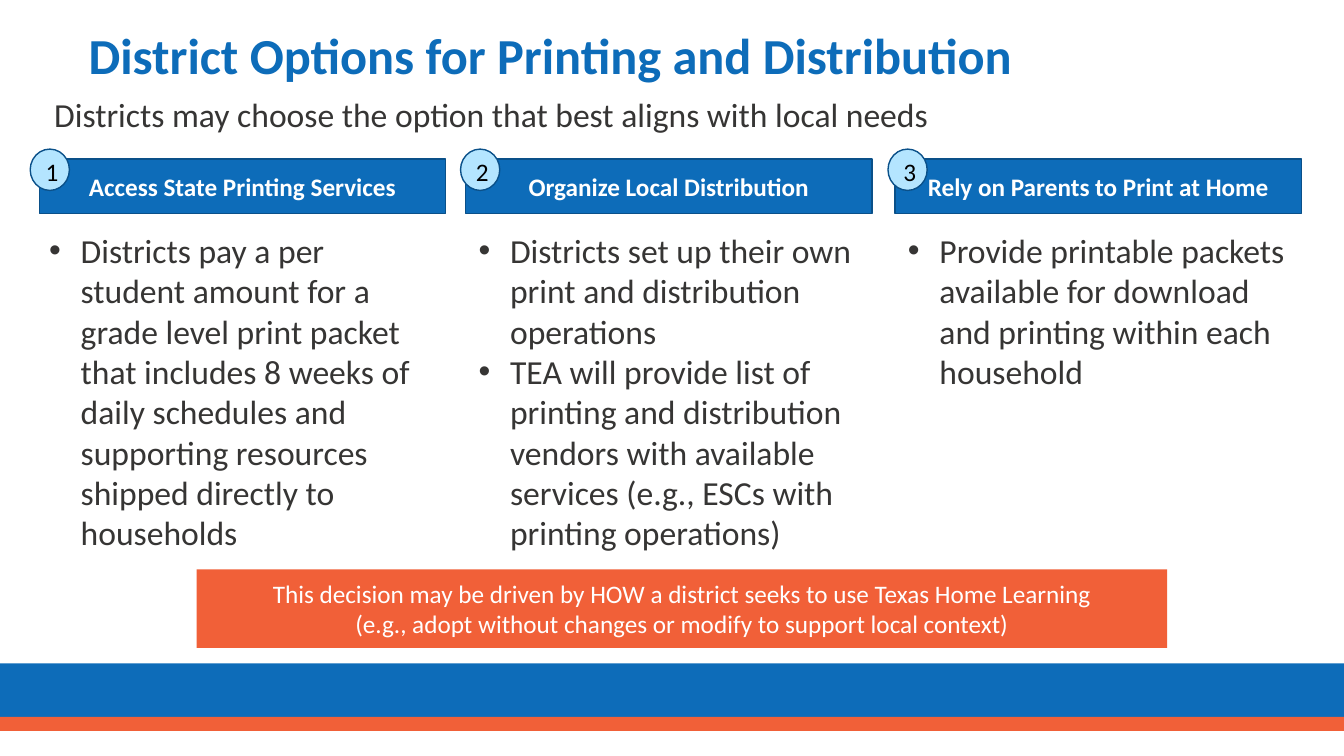
"""Build the slide on district options for printing and distribution."""
from dataclasses import dataclass

from lxml import etree
from pptx import Presentation
from pptx.dml.color import RGBColor
from pptx.enum.shapes import MSO_SHAPE
from pptx.enum.text import MSO_ANCHOR, PP_ALIGN
from pptx.oxml.ns import qn
from pptx.util import Pt

RECTANGLE, ROUNDED, OVAL = MSO_SHAPE.RECTANGLE, MSO_SHAPE.ROUNDED_RECTANGLE, MSO_SHAPE.OVAL
TOP, MIDDLE = MSO_ANCHOR.TOP, MSO_ANCHOR.MIDDLE
LEFT, CENTER = PP_ALIGN.LEFT, PP_ALIGN.CENTER


@dataclass(frozen=True)
class Theme:
    font: str = "Calibri"
    blue: str = "0D6CB9"
    outline: str = "0A5089"
    orange: str = "F16038"
    pale: str = "B4E5FF"
    ink: str = "363534"
    white: str = "FFFFFF"
    black: str = "000000"
    title_size: int = 36
    body_size: int = 24
    label_size: int = 18


theme = Theme()
deck = Presentation()
deck.slide_width, deck.slide_height = Pt(960), Pt(540)
page = deck.slides.add_slide(deck.slide_layouts[6])


def write(box, lines, size, color, bold=False, align=LEFT, anchor=TOP, bullet=False, spacing=1.0):
    frame = box.text_frame
    frame.word_wrap = True
    frame.vertical_anchor = anchor
    for index, line in enumerate(lines):
        para = frame.paragraphs[0] if index == 0 else frame.add_paragraph()
        para.alignment = align
        para.line_spacing = spacing
        if bullet:
            properties = para._p.get_or_add_pPr()
            properties.set("marL", str(Pt(22.5)))
            properties.set("indent", str(Pt(-22.5)))
            etree.SubElement(properties, qn("a:buFont")).set("typeface", "Arial")
            etree.SubElement(properties, qn("a:buChar")).set("char", "•")
        span = para.add_run()
        span.text = line
        span.font.color.rgb = RGBColor.from_string(color)
        for name, value in {"name": theme.font, "size": Pt(size), "bold": bold}.items():
            setattr(span.font, name, value)


def add_block(kind, left, top, width, height, fill, line=None):
    block = page.shapes.add_shape(kind, Pt(left), Pt(top), Pt(width), Pt(height))
    block.shadow.inherit = False
    block.fill.solid()
    block.fill.fore_color.rgb = RGBColor.from_string(fill)
    if line:
        block.line.color.rgb = RGBColor.from_string(line)
        block.line.width = Pt(1)
    else:
        block.line.fill.background()
    return block


add_block(RECTANGLE, 0, 473.8, 960, 41.8, theme.blue)
add_block(RECTANGLE, 0, 512, 960, 10, theme.orange)

title = page.shapes.add_textbox(Pt(56.2), Pt(12.2), Pt(875.5), Pt(59))
write(title, ["District Options for Printing and Distribution"], theme.title_size, theme.blue,
      bold=True, anchor=MIDDLE, spacing=0.9)

callout = add_block(RECTANGLE, 140.5, 406.8, 693.2, 56, theme.orange)
write(callout, ["This decision may be driven by HOW a district seeks to use Texas Home Learning",
                "(e.g., adopt without changes or modify to support local context)"],
      theme.label_size, theme.white, align=CENTER, anchor=MIDDLE)

subtitle = page.shapes.add_textbox(Pt(31.7), Pt(63.4), Pt(918.7), Pt(36))
write(subtitle, ["Districts may choose the option that best aligns with local needs"],
      theme.body_size, theme.ink)

options = [
    (28.1, 21.6, "Access State Printing Services",
     ["Districts pay a per student amount for a grade level print packet that includes 8 weeks "
      "of daily schedules and supporting resources shipped directly to households"]),
    (332.6, 329, "Organize Local Distribution",
     ["Districts set up their own print and distribution operations",
      "TEA will provide list of printing and distribution vendors with available services "
      "(e.g., ESCs with printing operations)"]),
    (639.4, 634.3, "Rely on Parents to Print at Home",
     ["Provide printable packets available for download and printing within each household"]),
]
for number, (header_left, badge_left, heading, points) in enumerate(options, 1):
    body_left = 28.1 + (number - 1) * 306.7
    body = page.shapes.add_textbox(Pt(body_left), Pt(160.6), Pt(290.2), Pt(240))
    write(body, points, theme.body_size, theme.ink, bullet=True)

    header = add_block(ROUNDED, header_left, 113.5, 290.2, 39, theme.blue, theme.outline)
    header.adjustments[0] = 0
    write(header, [heading], theme.label_size, theme.white, bold=True, align=CENTER, anchor=MIDDLE)

    badge = add_block(OVAL, badge_left, 106.5, 28, 29.5, theme.pale, theme.outline)
    for side, inset in {"margin_left": 3, "margin_right": 0, "margin_top": 2, "margin_bottom": 0}.items():
        setattr(badge.text_frame, side, Pt(inset))
    write(badge, [str(number)], theme.label_size, theme.black, align=CENTER, anchor=MIDDLE)

deck.save("out.pptx")
